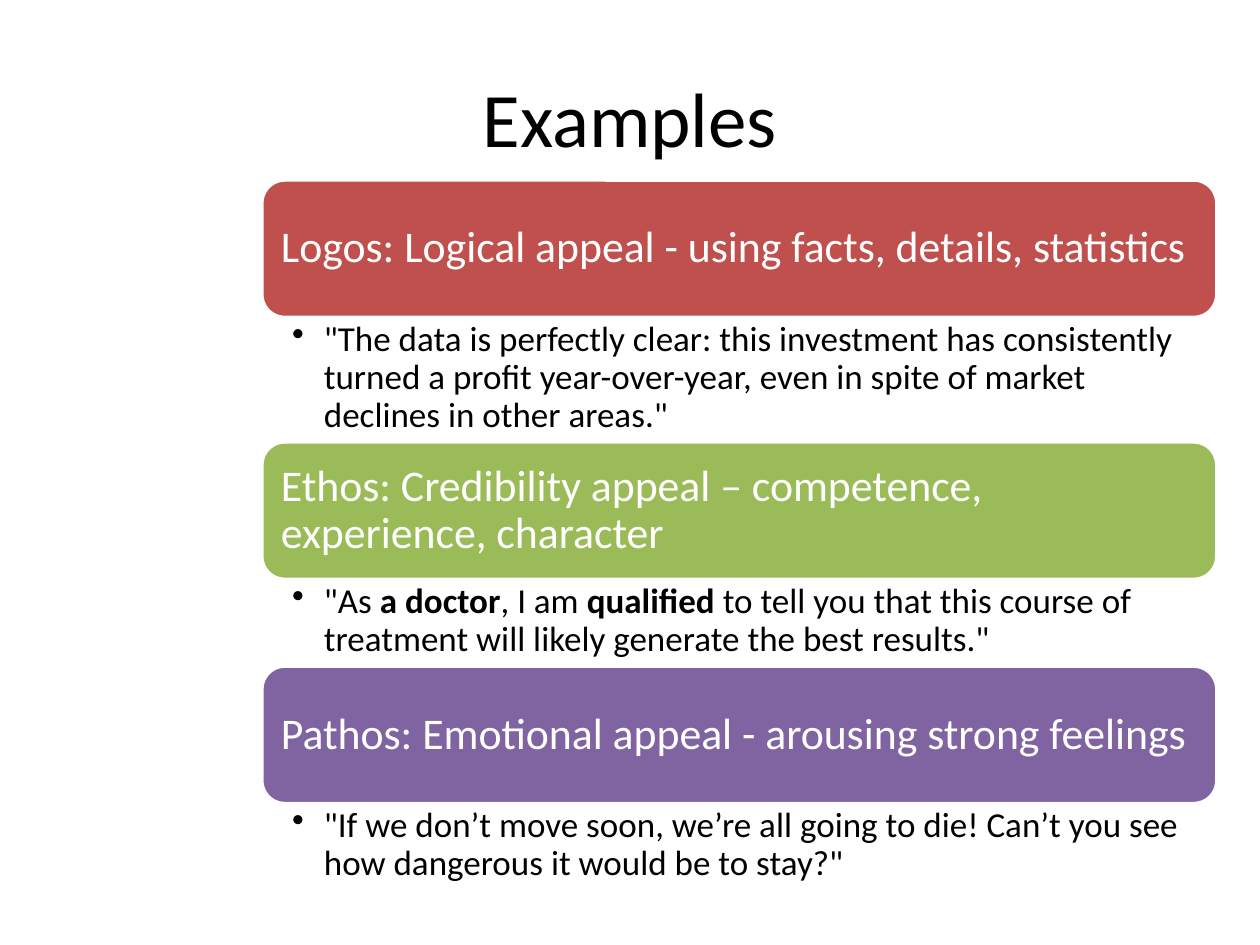
from lxml import etree
from pptx import Presentation
from pptx.dml.color import RGBColor
from pptx.enum.shapes import MSO_SHAPE
from pptx.enum.text import MSO_ANCHOR, PP_ALIGN
from pptx.oxml.ns import qn
from pptx.util import Cm, Pt

ROUND = MSO_SHAPE.ROUNDED_RECTANGLE
MIDDLE, TOP = MSO_ANCHOR.MIDDLE, MSO_ANCHOR.TOP
LEFT, CENTER = PP_ALIGN.LEFT, PP_ALIGN.CENTER
FONT = "Calibri"
COLORS = {
    "ink": "000000",
    "paper": "FFFFFF",
    "logos": "C0504D",
    "ethos": "9BBB59",
    "pathos": "8064A2",
}
EDGE, WIDE, START, BAR = 5.28, 19.25, 3.63, 2.77
APPEALS = [
    ("logos", "Logos: Logical appeal - using facts, details, statistics", 2.51,
     [("\"The data is perfectly clear: this investment has consistently turned "
       "a profit year-over-year, even in spite of market declines in other areas.\"", False)]),
    ("ethos", "Ethos: Credibility appeal – competence, experience, character", 1.75,
     [("\"As ", False), ("a doctor", True), (", I am ", False), ("qualified", True),
      (" to tell you that this course of treatment will likely generate "
       "the best results.\"", False)]),
    ("pathos", "Pathos: Emotional appeal - arousing strong feelings", 1.75,
     [("\"If we don’t move soon, we’re all going to die! Can’t you see "
       "how dangerous it would be to stay?\"", False)]),
]


def color(name):
    """Return the named colour."""
    return RGBColor.from_string(COLORS[name])


def add_run(para, text, size, tint, bold=False):
    """Append one formatted run."""
    run = para.add_run()
    run.text = text
    font = run.font
    font.name, font.size, font.bold = FONT, Pt(size), bold
    font.color.rgb = color(tint)


def set_frame(frame, anchor, left, top, right, bottom):
    """Set wrapping, anchor and margins in centimetres."""
    frame.word_wrap = True
    frame.vertical_anchor = anchor
    frame.margin_left, frame.margin_top = Cm(left), Cm(top)
    frame.margin_right, frame.margin_bottom = Cm(right), Cm(bottom)


def set_bullet(para):
    """Give the paragraph a round bullet with a hanging indent."""
    props = para._p.get_or_add_pPr()
    props.set("marL", str(Cm(0.64)))
    props.set("indent", str(-Cm(0.64)))
    etree.SubElement(props, qn("a:buChar")).set("char", "•")


def add_title(slide, text):
    """Place and fill the title."""
    title = slide.shapes.title
    title.left, title.top = Cm(1.27), Cm(0.76)
    title.width, title.height = Cm(22.86), Cm(3.18)
    title.text_frame.vertical_anchor = MIDDLE
    para = title.text_frame.paragraphs[0]
    para.alignment = CENTER
    add_run(para, text, 44, "ink")


def add_bar(slide, top, fill, text):
    """Draw a rounded heading bar."""
    bar = slide.shapes.add_shape(ROUND, Cm(EDGE), Cm(top), Cm(WIDE), Cm(BAR))
    bar.shadow.inherit = False
    bar.fill.solid()
    bar.fill.fore_color.rgb = color(fill)
    bar.line.color.rgb = color("paper")
    bar.line.width = Pt(2)
    set_frame(bar.text_frame, MIDDLE, 0.25, 0.25, 0.25, 0.25)
    para = bar.text_frame.paragraphs[0]
    para.alignment, para.line_spacing = LEFT, 0.9
    add_run(para, text, 25, "paper")


def add_quote(slide, top, height, parts):
    """Add a bulleted example below a bar."""
    box = slide.shapes.add_textbox(Cm(EDGE), Cm(top), Cm(WIDE), Cm(height))
    set_frame(box.text_frame, TOP, 0.61, 0.08, 0.48, 0.08)
    para = box.text_frame.paragraphs[0]
    para.level, para.line_spacing = 1, 0.9
    set_bullet(para)
    for text, bold in parts:
        add_run(para, text, 20, "ink", bold)


def main():
    """Build and save the slide."""
    deck = Presentation()
    deck.slide_width, deck.slide_height = Cm(25.4), Cm(19.05)
    slide = deck.slides.add_slide(deck.slide_layouts[5])
    add_title(slide, "Examples")
    top = START
    for fill, head, height, parts in APPEALS:
        add_bar(slide, top, fill, head)
        add_quote(slide, top + BAR, height, parts)
        top += BAR + height
    deck.save("out.pptx")


if __name__ == "__main__":
    main()
